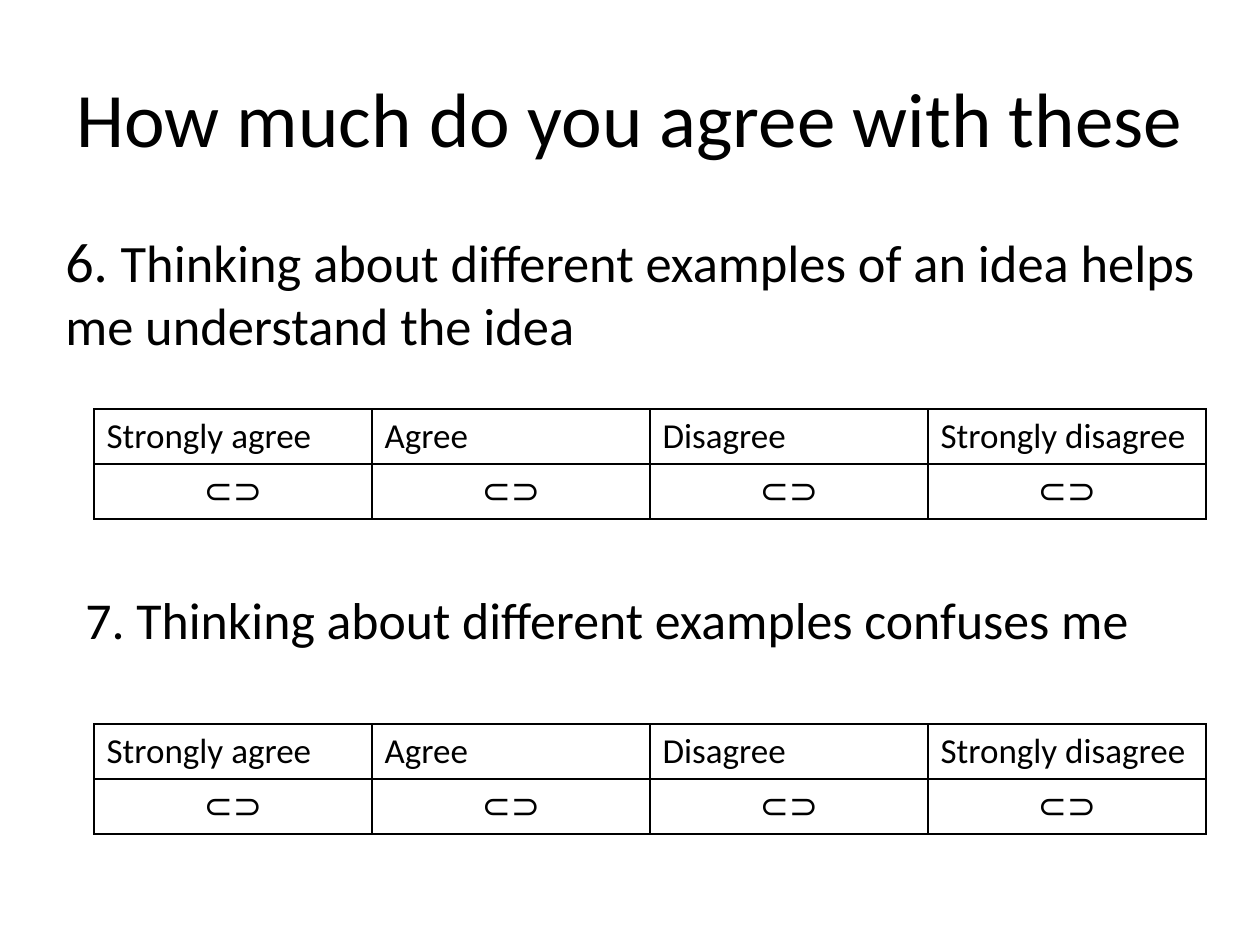
"""Build a survey slide with two statements and their agreement scales."""
from typing import NamedTuple

from lxml import etree
from pptx import Presentation
from pptx.dml.color import RGBColor
from pptx.enum.text import MSO_ANCHOR, PP_ALIGN
from pptx.oxml.ns import qn
from pptx.util import Emu, Pt

LEFT, CENTER = PP_ALIGN.LEFT, PP_ALIGN.CENTER
TOP, MIDDLE = MSO_ANCHOR.TOP, MSO_ANCHOR.MIDDLE
PX_PER_INCH = 126
FONT = "Calibri"
COLORS = {"ink": "000000", "paper": "FFFFFF"}
ANSWERS = ("Strongly agree", "Agree", "Disagree", "Strongly disagree")
BUBBLE = "⊂⊃"
ANSWER_SIZE = 20
SCALE_LEFT, COLUMN_WIDTH, ROW_HEIGHT = 94, 278, 55
SCALE_TOPS = (409, 724)
BORDER_SIDES = ("a:lnL", "a:lnR", "a:lnT", "a:lnB")


class Run(NamedTuple):
    text: str
    size: float


class TextBlock(NamedTuple):
    left: int
    top: int
    width: int
    height: int
    runs: tuple[Run, ...]
    alignment: PP_ALIGN = LEFT
    anchor: MSO_ANCHOR = TOP


TEXT_BLOCKS = (
    TextBlock(63, 38, 1134, 157, (Run("How much do you agree with these", 44),), CENTER, MIDDLE),
    TextBlock(53, 220, 1155, 378, (
        Run("6. ", 32),
        Run("Thinking about different examples of an idea helps me understand the idea", 30),
    )),
    TextBlock(73, 582, 1155, 116, (Run("7. Thinking about different examples confuses me", 29.6),)),
)


def px(length: int) -> Emu:
    return Emu(round(length * 914400 / PX_PER_INCH))


def color(name: str) -> RGBColor:
    return RGBColor.from_string(COLORS[name])


def write_runs(paragraph, runs: tuple[Run, ...], alignment: PP_ALIGN) -> None:
    paragraph.alignment = alignment
    for item in runs:
        run = paragraph.add_run()
        run.text = item.text
        run.font.name = FONT
        run.font.size = Pt(item.size)
        run.font.color.rgb = color("ink")


def add_text(slide, block: TextBlock) -> None:
    shape = slide.shapes.add_textbox(px(block.left), px(block.top), px(block.width), px(block.height))
    frame = shape.text_frame
    frame.word_wrap = True
    frame.vertical_anchor = block.anchor
    write_runs(frame.paragraphs[0], block.runs, block.alignment)


def style_cell(cell) -> None:
    cell.fill.solid()
    cell.fill.fore_color.rgb = color("paper")
    properties = cell._tc.get_or_add_tcPr()
    for position, side in enumerate(BORDER_SIDES):
        line = etree.Element(qn(side), w=str(Pt(1)))
        fill = etree.SubElement(line, qn("a:solidFill"))
        etree.SubElement(fill, qn("a:srgbClr"), val=COLORS["ink"])
        properties.insert(position, line)


def add_scale(slide, top: int) -> None:
    rows = ((ANSWERS, LEFT), ((BUBBLE,) * len(ANSWERS), CENTER))
    table = slide.shapes.add_table(
        len(rows), len(ANSWERS), px(SCALE_LEFT), px(top),
        px(COLUMN_WIDTH * len(ANSWERS)), px(ROW_HEIGHT * len(rows)),
    ).table
    table.first_row = False
    table.horz_banding = False
    for row_index, (texts, alignment) in enumerate(rows):
        for column_index, text in enumerate(texts):
            cell = table.cell(row_index, column_index)
            style_cell(cell)
            write_runs(cell.text_frame.paragraphs[0], (Run(text, ANSWER_SIZE),), alignment)


def main() -> None:
    presentation = Presentation()
    presentation.slide_width, presentation.slide_height = px(1260), px(945)
    slide = presentation.slides.add_slide(presentation.slide_layouts[6])
    for block in TEXT_BLOCKS:
        add_text(slide, block)
    for top in SCALE_TOPS:
        add_scale(slide, top)
    presentation.save("out.pptx")


if __name__ == "__main__":
    main()
